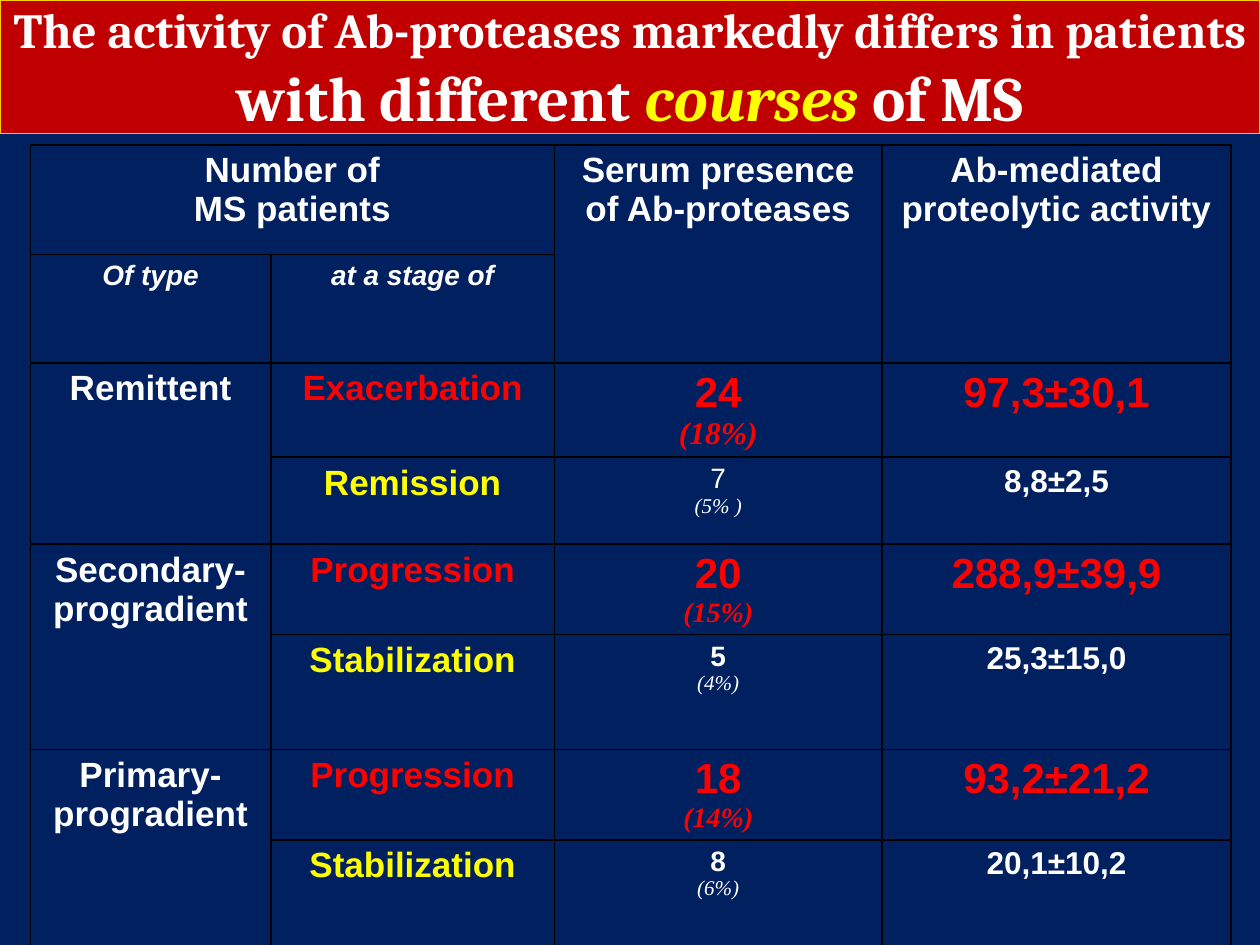
"""Build the slide on Ab-protease activity across courses of MS."""
from dataclasses import dataclass

from lxml import etree
from pptx import Presentation
from pptx.dml.color import RGBColor
from pptx.enum.text import MSO_ANCHOR, MSO_AUTO_SIZE, PP_ALIGN
from pptx.oxml.ns import qn
from pptx.util import Inches, Pt

CENTER = PP_ALIGN.CENTER
MIDDLE = MSO_ANCHOR.MIDDLE
NO_AUTOFIT = MSO_AUTO_SIZE.NONE

NAVY = RGBColor(0x00, 0x20, 0x60)
CRIMSON = RGBColor(0xC0, 0x00, 0x00)
GOLD = RGBColor(0xFF, 0xCC, 0x00)
WHITE = RGBColor(0xFF, 0xFF, 0xFF)
RED = RGBColor(0xFF, 0x00, 0x00)
YELLOW = RGBColor(0xFF, 0xFF, 0x00)
BLACK = RGBColor(0x00, 0x00, 0x00)

COL_WIDTHS = [1.91, 2.25, 2.6, 2.77]
ROW_HEIGHTS = [0.87, 0.86, 0.72, 0.69, 0.69, 0.91, 0.69, 0.95]
FIRST_STAGE_ROW = 2


@dataclass
class Text:
    text: str
    size: float = 20
    color: RGBColor = WHITE
    bold: bool = True
    italic: bool = False
    name: str = "Arial"


@dataclass
class Cell:
    row: int
    col: int
    lines: list[Text]
    rows: int = 1
    cols: int = 1


@dataclass
class Stage:
    name: str
    count: str
    share: str
    activity: str
    active: bool
    share_size: float = 12
    count_bold: bool = True


TITLE = [
    Text("The activity of Ab-proteases markedly differs in patients ", 28, name="Cambria"),
    Text("with different ", 36, name="Cambria"),
    Text("courses", 36, YELLOW, italic=True, name="Cambria"),
    Text(" of MS", 36, name="Cambria"),
]
HEADERS = [
    Cell(0, 0, [Text("Number of"), Text("MS patients")], cols=2),
    Cell(0, 2, [Text("Serum presence of Ab-proteases")], rows=2),
    Cell(0, 3, [Text("Ab-mediated proteolytic activity")], rows=2),
    Cell(1, 0, [Text("Of type", 16, italic=True)]),
    Cell(1, 1, [Text("at a stage of", 16, italic=True)]),
]
COURSES = [["Remittent"], ["Secondary-", "progradient"], ["Primary-", "progradient"]]
STAGES = [
    Stage("Exacerbation", "24", "(18%)", "97,3±30,1", True, 18),
    Stage("Remission", "7", "(5% )", "8,8±2,5", False, count_bold=False),
    Stage("Progression", "20", "(15%)", "288,9±39,9", True, 16),
    Stage("Stabilization", "5", "(4%)", "25,3±15,0", False),
    Stage("Progression", "18", "(14%)", "93,2±21,2", True, 16),
    Stage("Stabilization", "8", "(6%)", "20,1±10,2", False),
]


def add_run(p, text: Text) -> None:
    """Append a formatted run to a paragraph."""
    r = p.add_run()
    r.text = text.text
    fmt = {"size": Pt(text.size), "bold": text.bold, "italic": text.italic, "name": text.name}
    for key, value in fmt.items():
        setattr(r.font, key, value)
    r.font.color.rgb = text.color


def add_title(slide) -> None:
    """Format the title placeholder as a banner."""
    sp = slide.shapes.title
    box = {"left": 0, "top": 0, "width": Inches(10), "height": Inches(1.06)}
    for key, value in box.items():
        setattr(sp, key, value)
    sp.fill.solid()
    sp.fill.fore_color.rgb = CRIMSON
    sp.line.color.rgb = GOLD
    sp.line.width = Pt(0.75)
    tf = sp.text_frame
    frame = {"word_wrap": True, "auto_size": NO_AUTOFIT, "vertical_anchor": MIDDLE}
    for key, value in frame.items():
        setattr(tf, key, value)
    p = tf.paragraphs[0]
    p.alignment = CENTER
    for text in TITLE:
        add_run(p, text)


def format_cell(cell) -> None:
    """Clear the fill of a table cell and give it black borders."""
    cell.fill.background()
    pr = cell._tc.get_or_add_tcPr()
    for i, side in enumerate(("a:lnL", "a:lnR", "a:lnT", "a:lnB")):
        ln = etree.Element(qn(side), w=str(Pt(1)))
        fill = etree.SubElement(ln, qn("a:solidFill"))
        etree.SubElement(fill, qn("a:srgbClr"), val=str(BLACK))
        pr.insert(i, ln)


def fill_cell(table, item: Cell) -> None:
    """Merge a cell over its span and write its lines."""
    cell = table.cell(item.row, item.col)
    if item.rows * item.cols > 1:
        cell.merge(table.cell(item.row + item.rows - 1, item.col + item.cols - 1))
    tf = cell.text_frame
    for i, text in enumerate(item.lines):
        p = tf.add_paragraph() if i else tf.paragraphs[0]
        p.alignment = CENTER
        add_run(p, text)


def stage_cells(row: int, stage: Stage) -> list[Cell]:
    """Return the three cells that describe a stage."""
    color = RED if stage.active else WHITE
    count = Text(stage.count, 24 if stage.active else 16, color, stage.count_bold)
    share = Text(stage.share, stage.share_size, color, stage.active, True, "Times New Roman")
    return [
        Cell(row, 1, [Text(stage.name, color=RED if stage.active else YELLOW)]),
        Cell(row, 2, [count, share]),
        Cell(row, 3, [Text(stage.activity, 24 if stage.active else 18, color)]),
    ]


def add_results(slide) -> None:
    """Add the table of courses, stages and activities."""
    table = slide.shapes.add_table(
        len(ROW_HEIGHTS), len(COL_WIDTHS), Inches(0.24), Inches(1.15),
        Inches(sum(COL_WIDTHS)), Inches(sum(ROW_HEIGHTS))).table
    table.first_row = table.horz_banding = False
    for col, width in zip(table.columns, COL_WIDTHS):
        col.width = Inches(width)
    for row, height in zip(table.rows, ROW_HEIGHTS):
        row.height = Inches(height)
    for cell in table.iter_cells():
        format_cell(cell)
    items = list(HEADERS)
    for i, names in enumerate(COURSES):
        items.append(Cell(FIRST_STAGE_ROW + 2 * i, 0, [Text(n) for n in names], rows=2))
    for row, stage in enumerate(STAGES, FIRST_STAGE_ROW):
        items += stage_cells(row, stage)
    for item in items:
        fill_cell(table, item)


def main() -> None:
    """Build and save the presentation."""
    prs = Presentation()
    prs.slide_width, prs.slide_height = Inches(10), Inches(7.5)
    slide = prs.slides.add_slide(prs.slide_layouts[5])
    slide.background.fill.solid()
    slide.background.fill.fore_color.rgb = NAVY
    add_title(slide)
    add_results(slide)
    prs.save("out.pptx")


if __name__ == "__main__":
    main()
